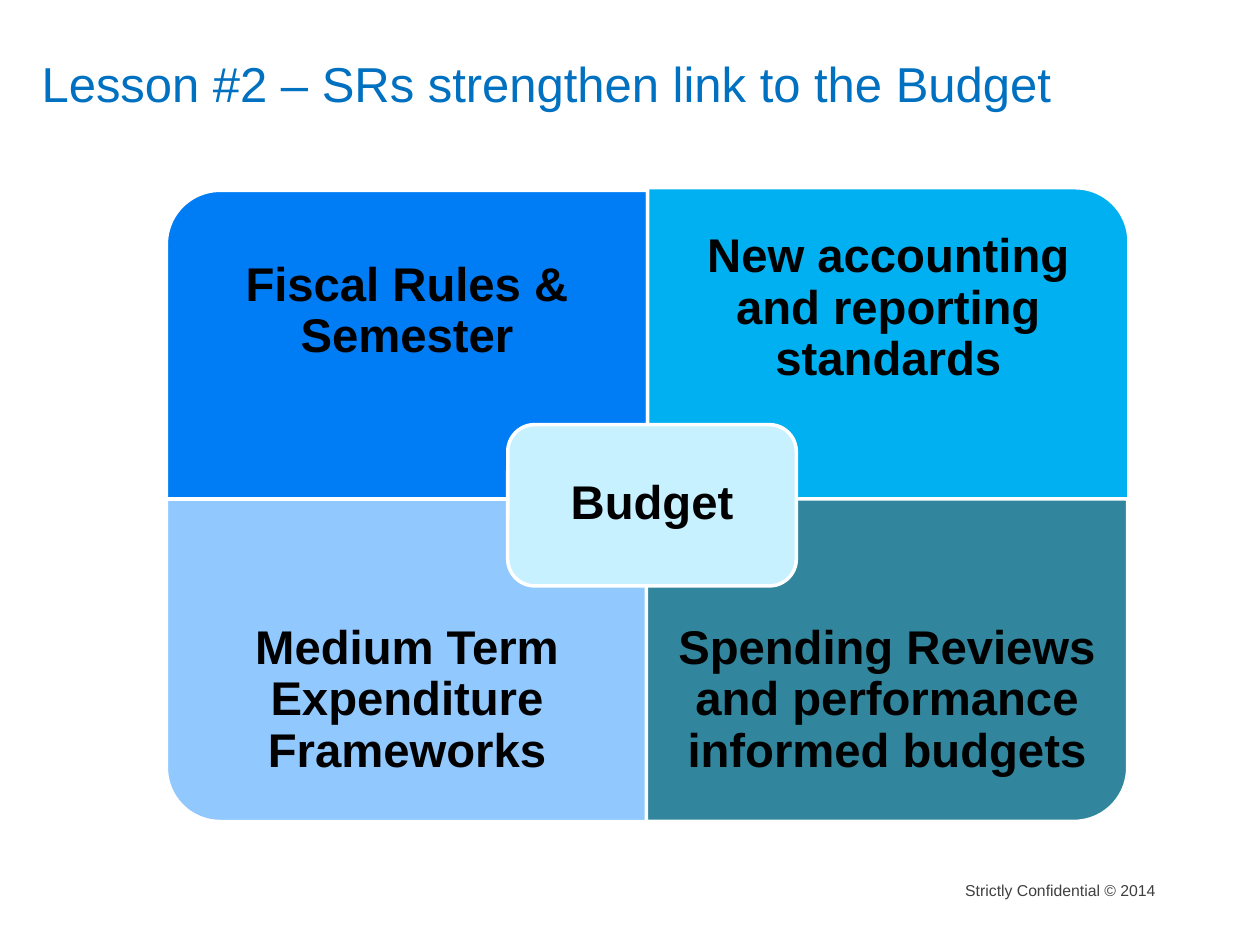
from pptx import Presentation
from pptx.dml.color import RGBColor
from pptx.enum import shapes, text
from pptx.util import Inches, Pt

THEME = {
    "font": "Arial",
    "title": {"color": "0070C0", "size": 28, "bold": False},
    "label": {"color": "000000", "size": 27, "bold": True},
    "footer": {"color": "404040", "size": 9, "bold": False},
    "outline": "FFFFFF",
    "outline_width": 2,
    "rules": "007CF5",
    "accounting": "00B0F0",
    "frameworks": "91C9FF",
    "reviews": "31859C",
    "budget": "C7F1FF",
}


def write(box, wording, style, align, anchor, margins, **spacing):
    """Fill a text holder; margins are left, top, right, bottom in inches."""
    frame = box.text_frame
    frame.word_wrap = True
    frame.auto_size = text.MSO_AUTO_SIZE.NONE
    frame.vertical_anchor = anchor
    for side, margin in zip(("left", "top", "right", "bottom"), margins):
        setattr(frame, f"margin_{side}", Inches(margin))
    paragraph = frame.paragraphs[0]
    for name, value in {"alignment": align, **spacing}.items():
        setattr(paragraph, name, value)
    run = paragraph.add_run()
    run.text = wording
    look = THEME[style]
    font = {"name": THEME["font"], "size": Pt(look["size"]), "bold": look["bold"]}
    for name, value in font.items():
        setattr(run.font, name, value)
    run.font.color.rgb = RGBColor.from_string(look["color"])


def add_panel(preset, box, color, rotation=0):
    panel = slide.shapes.add_shape(preset, *map(Inches, box))
    panel.shadow.inherit = False
    panel.rotation = rotation
    panel.fill.solid()
    panel.fill.fore_color.rgb = RGBColor.from_string(THEME[color])
    panel.line.color.rgb = RGBColor.from_string(THEME["outline"])
    panel.line.width = Pt(THEME["outline_width"])


prs = Presentation()
prs.slide_width, prs.slide_height = Inches(10), Inches(7.5)
slide = prs.slides.add_slide(prs.slide_layouts[5])

title = slide.shapes.title
title.left, title.top, title.width, title.height = map(Inches, (0.33, 0.27, 9.36, 0.64))
write(title, "Lesson #2 – SRs strengthen link to the Budget", "title",
      text.PP_ALIGN.LEFT, text.MSO_ANCHOR.BOTTOM, (0, 0, 0, 0.02))

footer = slide.shapes.add_textbox(*map(Inches, (7.59, 6.95, 1.58, 0.24)))
write(footer, "Strictly Confidential © 2014", "footer",
      text.PP_ALIGN.RIGHT, text.MSO_ANCHOR.TOP, (0, 0.04, 0, 0))

# Each quadrant's one rounded corner is turned to the outside of the matrix.
width, height, label_height = 3.82, 2.56, 1.92
quadrants = [
    ("Fiscal Rules & Semester", "rules", 1.32, 1.51, 270),
    ("New accounting and reporting standards", "accounting", 5.14, 1.49, 0),
    ("Medium Term Expenditure Frameworks", "frameworks", 1.32, 3.96, 180),
    ("Spending Reviews and performance informed budgets", "reviews", 5.13, 3.96, 90),
]
labels = []
for wording, color, left, top, rotation in quadrants:
    box = (left, top, width, height)
    if rotation % 180:
        shift = (width - height) / 2
        box = (left + shift, top - shift, height, width)
    add_panel(shapes.MSO_SHAPE.ROUND_1_RECTANGLE, box, color, rotation)
    is_lower = rotation in (90, 180)
    label_top = top + (height - label_height if is_lower else 0)
    labels.append((wording, (left, label_top, width, label_height), 0.21))

add_panel(shapes.MSO_SHAPE.ROUNDED_RECTANGLE, (4.03, 3.37, 2.29, 1.28), "budget")
labels.append(("Budget", (4.09, 3.43, 2.17, 1.15), 0.11))

for wording, box, margin in labels:
    label = slide.shapes.add_textbox(*map(Inches, box))
    write(label, wording, "label", text.PP_ALIGN.CENTER, text.MSO_ANCHOR.MIDDLE,
          (margin,) * 4, line_spacing=0.9, space_after=Pt(9.45))

prs.save("out.pptx")
